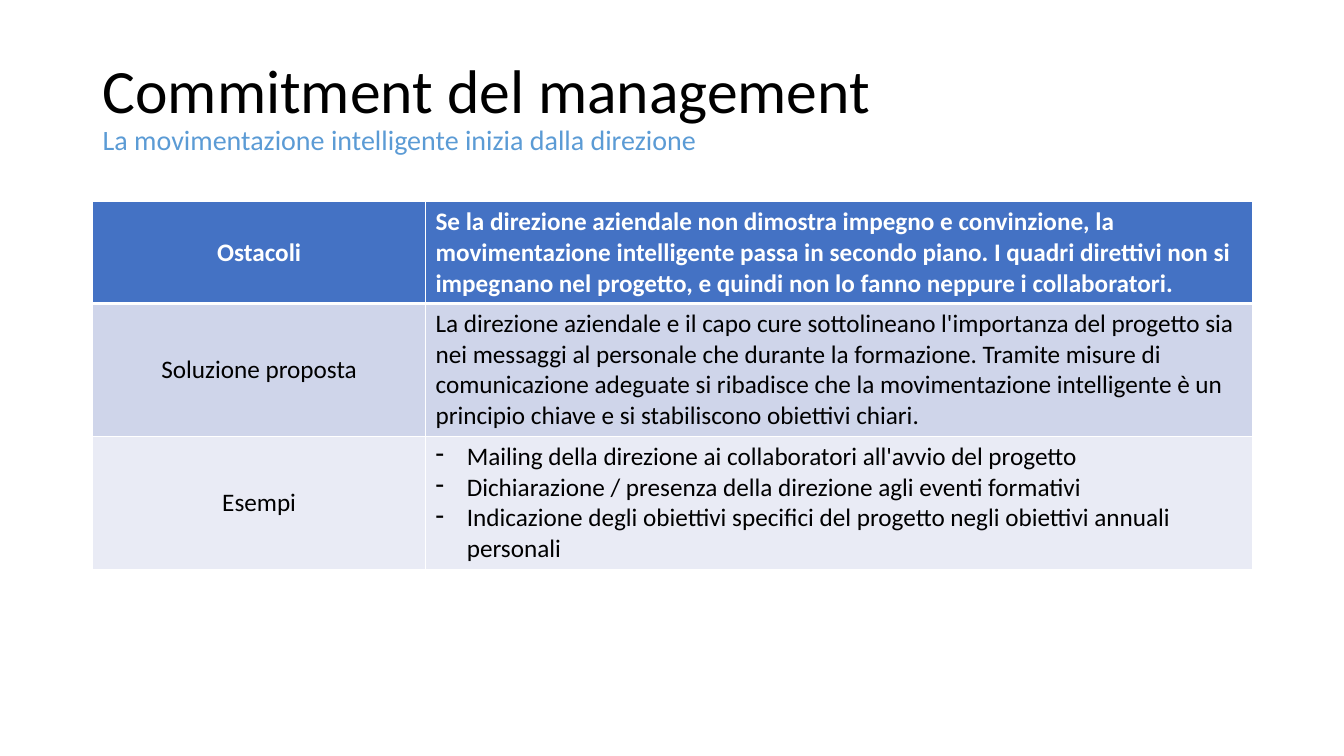
import pptx
import pptx.util
import pptx.dml.color
import pptx.enum.text
import pptx.oxml
import pptx.oxml.ns

Inches = pptx.util.Inches
Pt = pptx.util.Pt
ALIGN = pptx.enum.text.PP_ALIGN
MIDDLE = pptx.enum.text.MSO_ANCHOR.MIDDLE
FONT = "Calibri"

ROWS = [
    ("Ostacoli", [
        "Se la direzione aziendale non dimostra impegno e convinzione, la "
        "movimentazione intelligente passa in secondo piano. I quadri direttivi non si "
        "impegnano nel progetto, e quindi non lo fanno neppure i collaboratori."],
     "4472C4", 1.01),
    ("Soluzione proposta", [
        "La direzione aziendale e il capo cure sottolineano l'importanza del progetto sia "
        "nei messaggi al personale che durante la formazione. Tramite misure di "
        "comunicazione adeguate si ribadisce che la movimentazione intelligente è un "
        "principio chiave e si stabiliscono obiettivi chiari."],
     "CFD5EA", 1.32),
    ("Esempi", [
        "Mailing della direzione ai collaboratori all'avvio del progetto",
        "Dichiarazione / presenza della direzione agli eventi formativi",
        "Indicazione degli obiettivi specifici del progetto negli obiettivi annuali personali"],
     "E9EBF5", 1.32),
]


def color(code):
    return pptx.dml.color.RGBColor.from_string(code)


def add_run(para, text, size, code, bold=False):
    run = para.add_run()
    run.text = text
    font = run.font
    font.name = FONT
    font.size = Pt(size)
    font.bold = bold
    font.color.rgb = color(code)


def add_bullet(para):
    props = para._p.get_or_add_pPr()
    props.set("marL", str(Inches(0.31)))
    props.set("indent", str(-Inches(0.31)))
    props.append(pptx.oxml.parse_xml(
        f'<a:buChar {pptx.oxml.ns.nsdecls("a")} char="-"/>'))


def set_edges(cell, widths):
    props = cell._tc.get_or_add_tcPr()
    for spot, (side, width) in enumerate(widths.items()):
        props.insert(spot, pptx.oxml.parse_xml(
            f'<a:ln{side} {pptx.oxml.ns.nsdecls("a")} w="{Pt(width)}">'
            f'<a:solidFill><a:srgbClr val="FFFFFF"/></a:solidFill></a:ln{side}>'))


def fill_cell(cell, texts, fill, ink, bold, align):
    cell.fill.solid()
    cell.fill.fore_color.rgb = color(fill)
    cell.vertical_anchor = MIDDLE
    frame = cell.text_frame
    for spot, text in enumerate(texts):
        para = frame.add_paragraph() if spot else frame.paragraphs[0]
        para.alignment = align
        if len(texts) > 1:
            add_bullet(para)
        add_run(para, text, 18, ink, bold)


def add_title(slide, left, top, width, height):
    box = slide.shapes.add_textbox(
        Inches(left), Inches(top), Inches(width), Inches(height))
    frame = box.text_frame
    frame.word_wrap = True
    frame.vertical_anchor = MIDDLE
    para = frame.paragraphs[0]
    para.line_spacing = 0.9
    add_run(para, "Commitment del management", 44, "000000")
    para.add_line_break()
    add_run(para, "La movimentazione intelligente inizia dalla direzione", 20, "5B9BD5")


def add_grid(slide, left, top, width, label):
    height = sum(row[-1] for row in ROWS)
    table = slide.shapes.add_table(
        len(ROWS), 2, Inches(left), Inches(top), Inches(width), Inches(height)).table
    table.columns[0].width = Inches(label)
    table.columns[1].width = Inches(width - label)
    for spot, (name, texts, fill, tall) in enumerate(ROWS):
        table.rows[spot].height = Inches(tall)
        head = spot == 0
        ink = "FFFFFF" if head else "000000"
        pair = [([name], ALIGN.CENTER), (texts, ALIGN.LEFT)]
        for cell, (lines, align) in zip(table.rows[spot].cells, pair):
            fill_cell(cell, lines, fill, ink, head, align)
            set_edges(cell, {"L": 1, "R": 1, "T": 3 if spot == 1 else 1,
                             "B": 3 if head else 1})


def main():
    deck = pptx.Presentation()
    deck.slide_width = Inches(13.33)
    deck.slide_height = Inches(7.5)
    slide = deck.slides.add_slide(deck.slide_layouts[6])
    add_title(slide, 0.92, 0.35, 11.5, 1.45)
    add_grid(slide, 0.92, 2, 11.5, 3.3)
    deck.save("out.pptx")


if __name__ == "__main__":
    main()
